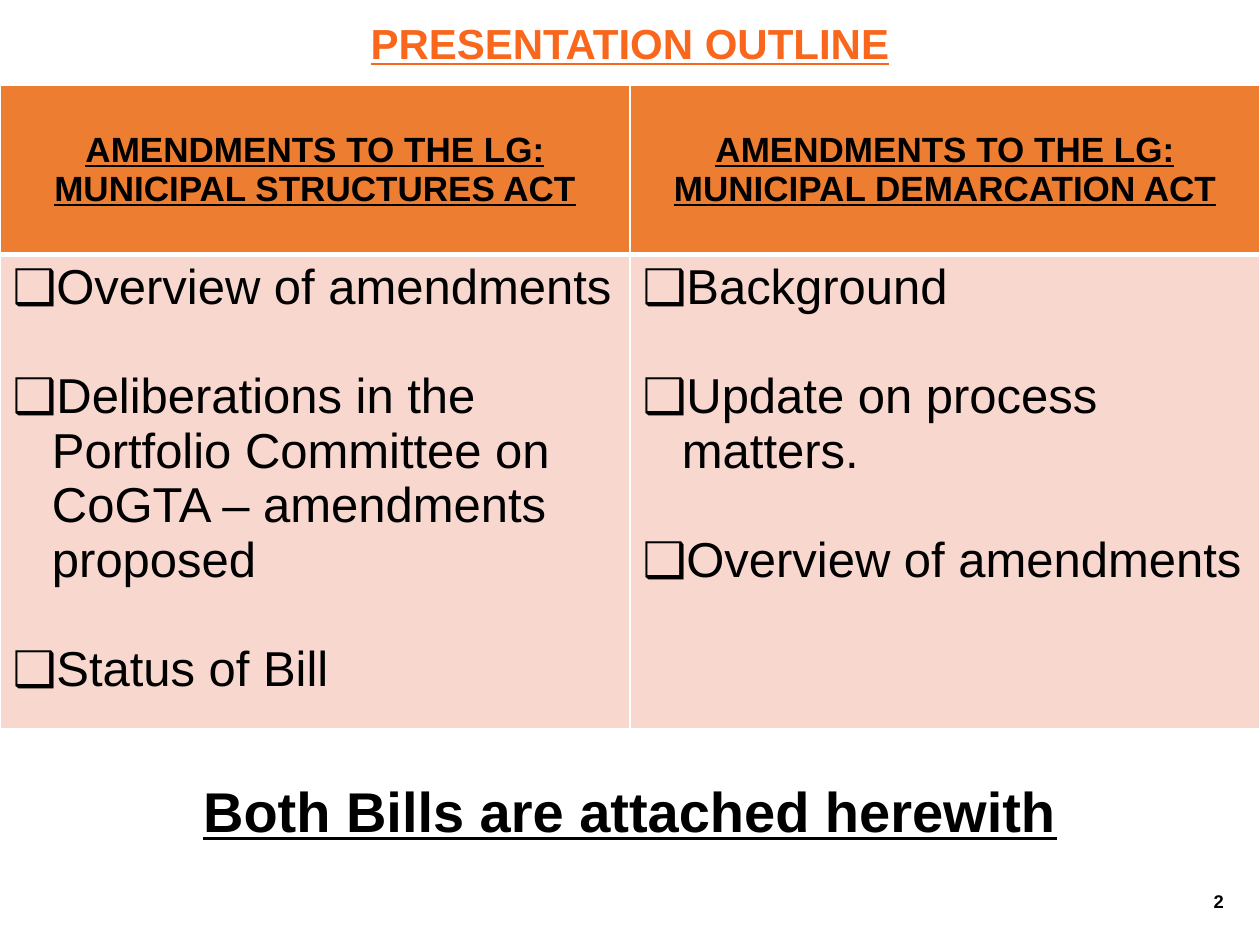
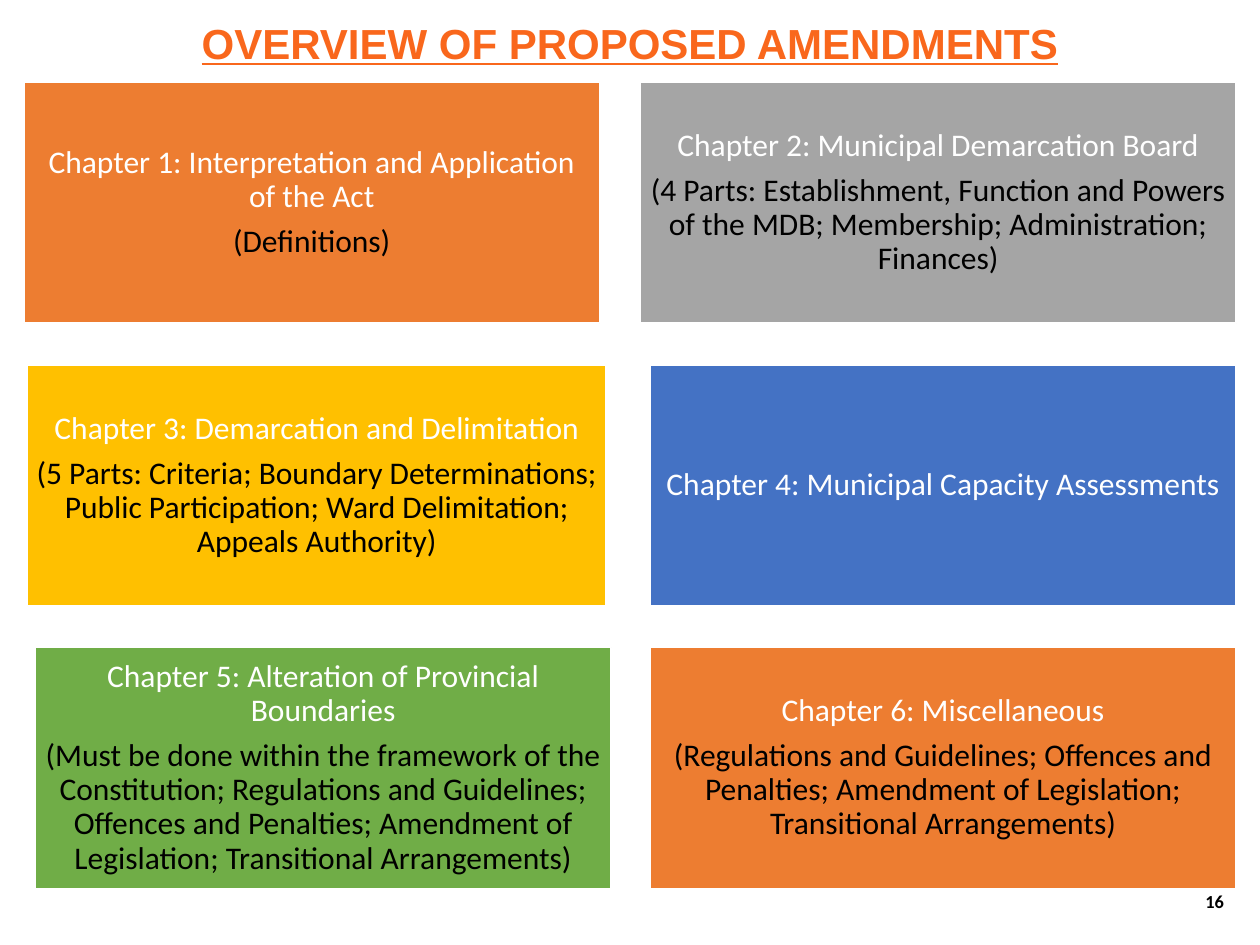
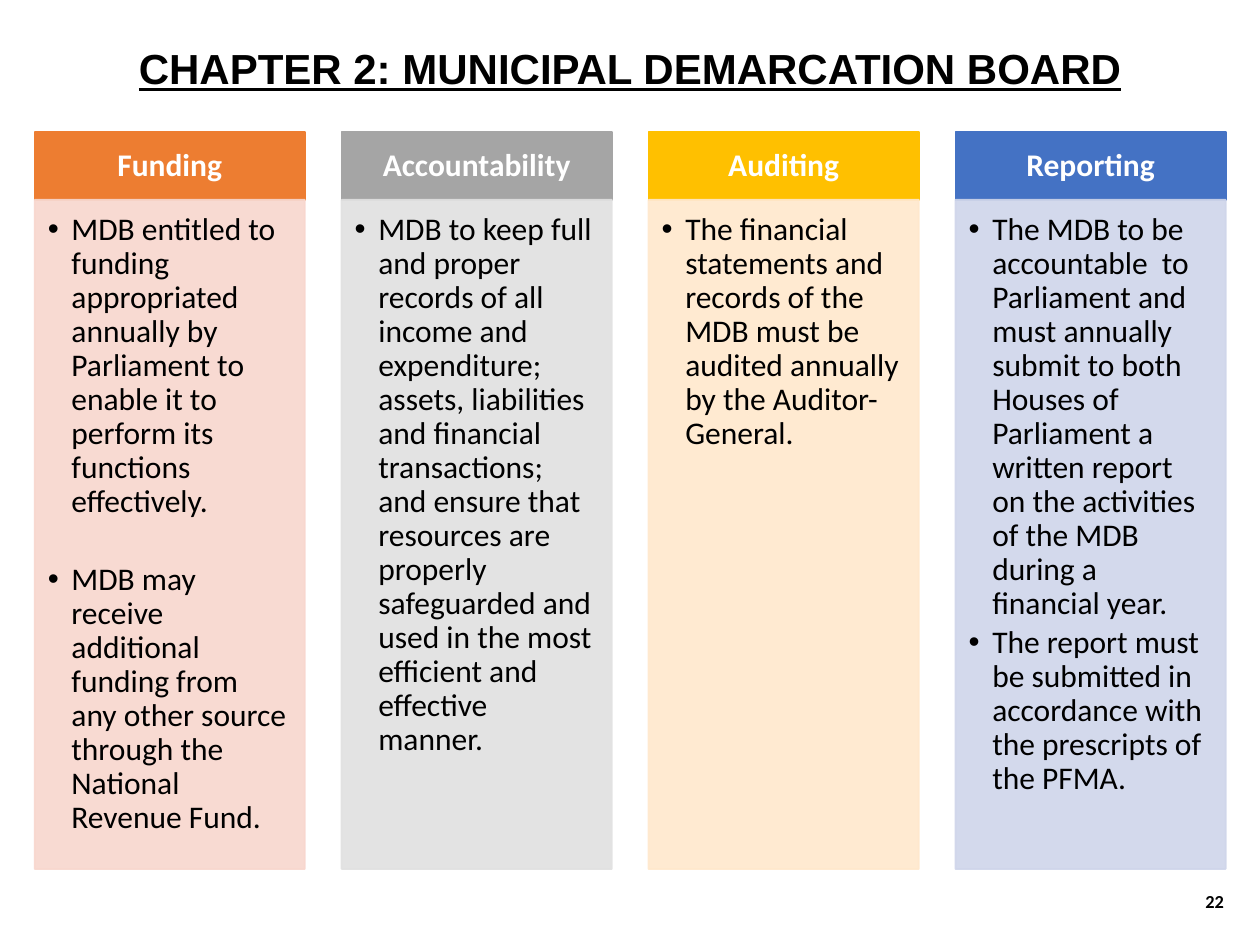
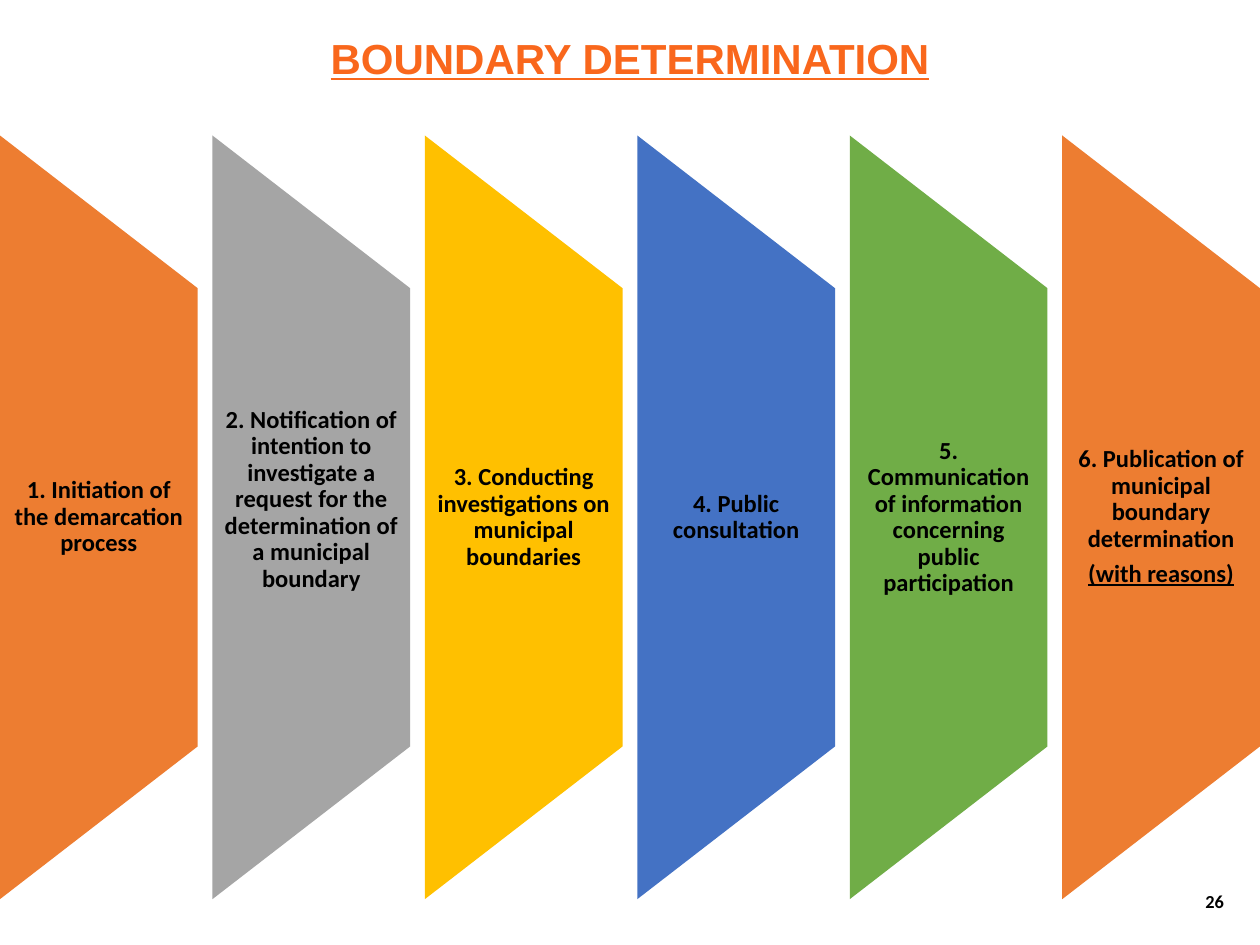
from lxml.etree import SubElement
from pptx import Presentation
from pptx.dml.color import RGBColor
from pptx.enum.shapes import MSO_SHAPE as SHAPE
from pptx.enum.text import MSO_ANCHOR as ANCHOR, PP_ALIGN as ALIGN
from pptx.oxml.ns import qn
from pptx.util import Pt

BLACK = RGBColor(0x00, 0x00, 0x00)
WHITE = RGBColor(0xFF, 0xFF, 0xFF)
TITLE_ORANGE = RGBColor(0xF9, 0x67, 0x1C)
ORANGE = RGBColor(0xED, 0x7D, 0x31)
GRAY = RGBColor(0xA5, 0xA5, 0xA5)
GOLD = RGBColor(0xFF, 0xC0, 0x00)
BLUE = RGBColor(0x44, 0x72, 0xC4)
GREEN = RGBColor(0x70, 0xAD, 0x47)
PALE_ORANGE = RGBColor(0xF8, 0xD7, 0xCE)
PALE_GRAY = RGBColor(0xE1, 0xE1, 0xE1)
PALE_GOLD = RGBColor(0xFF, 0xE8, 0xCC)
PALE_BLUE = RGBColor(0xCF, 0xD5, 0xEA)

SLIDE_W, SLIDE_H = 720, 540
HEADING, BODY = "Arial", "Calibri"
TITLE_BOX = (50, 9.4, 620, 33.8)
TALL_TITLE_BOX = (50, 9.4, 620, 62.6)

OUTLINE = [
    ("AMENDMENTS TO THE LG: MUNICIPAL STRUCTURES ACT",
     ["Overview of amendments",
      "Deliberations in the Portfolio Committee on CoGTA – amendments proposed",
      "Status of Bill"]),
    ("AMENDMENTS TO THE LG: MUNICIPAL DEMARCATION ACT",
     ["Background", "Update on process matters.", "Overview of amendments"]),
]

# left, width, colour, heading, details; two chapters to a row
CHAPTERS = [
    (13.7, 329, ORANGE, "Chapter 1: Interpretation and Application of the Act",
     "(Definitions)"),
    (365.8, 340.6, GRAY, "Chapter 2: Municipal Demarcation Board",
     "(4 Parts: Establishment, Function and Powers of the MDB; Membership; "
     "Administration; Finances)"),
    (15.8, 330.5, GOLD, "Chapter 3: Demarcation and Delimitation",
     "(5 Parts: Criteria; Boundary Determinations; Public Participation; "
     "Ward Delimitation; Appeals Authority)"),
    (371.5, 334.8, BLUE, "Chapter 4: Municipal Capacity Assessments", None),
    (20.2, 329, GREEN, "Chapter 5: Alteration of Provincial Boundaries",
     "(Must be done within the framework of the Constitution; Regulations and "
     "Guidelines; Offences and Penalties; Amendment of Legislation; "
     "Transitional Arrangements)"),
    (371.5, 334.8, ORANGE, "Chapter 6: Miscellaneous",
     "(Regulations and Guidelines; Offences and Penalties; Amendment of "
     "Legislation; Transitional Arrangements)"),
]

# heading, colour, pale colour, space after each bullet, bullets
BOARD_DUTIES = [
    ("Funding", ORANGE, PALE_ORANGE, 25.1,
     ["MDB entitled to funding appropriated annually by Parliament to enable "
      "it to perform its functions effectively.",
      "MDB may receive additional funding from any other source through the "
      "National Revenue Fund."]),
    ("Accountability", GRAY, PALE_GRAY, 2.7,
     ["MDB to keep full and proper records of all income and expenditure; "
      "assets, liabilities and financial transactions; and ensure that "
      "resources are properly safeguarded and used in the most efficient and "
      "effective manner."]),
    ("Auditing", GOLD, PALE_GOLD, 2.7,
     ["The financial statements and records of the MDB must be audited "
      "annually by the Auditor-General."]),
    ("Reporting", BLUE, PALE_BLUE, 2.7,
     ["The MDB to be accountable  to Parliament and must annually submit to "
      "both Houses of Parliament a written report on the activities of the "
      "MDB during a financial year.",
      "The report must be submitted in accordance with the prescripts of the "
      "PFMA."]),
]

# colour, step, underlined remark, bottom inset that lifts the text
STEPS = [
    (ORANGE, "1. Initiation of the demarcation process", None, 0),
    (GRAY, "2. Notification of intention to investigate a request for the "
           "determination of a municipal boundary", None, 20),
    (GOLD, "3. Conducting investigations on municipal boundaries", None, 0),
    (BLUE, "4. Public consultation", None, 0),
    (GREEN, "5. Communication of information concerning public participation",
     None, 0),
    (ORANGE, "6. Publication of municipal boundary determination",
     "(with reasons)", 0),
]


def points(*values):
    return [Pt(v) for v in values]


def add_text(tf, text, size=18, font=BODY, color=BLACK, bold=False,
             underline=False, align=ALIGN.CENTER, spacing=None, after=0,
             bullet=None, indent=0):
    """Write a paragraph, using the empty first one if it is still free."""
    p = tf.paragraphs[0]
    if p.runs:
        p = tf.add_paragraph()
    p.alignment = align
    p.space_before, p.space_after = Pt(0), Pt(after)
    if spacing:
        p.line_spacing = spacing
    if bullet:
        pPr = p._p.get_or_add_pPr()
        pPr.set("marL", str(Pt(indent)))
        pPr.set("indent", str(-Pt(indent)))
        SubElement(pPr, qn("a:buFont")).set("typeface", HEADING)
        SubElement(pPr, qn("a:buChar")).set("char", bullet)
    r = p.add_run()
    r.text = text
    r.font.name, r.font.size = font, Pt(size)
    r.font.bold, r.font.underline = bold, underline
    r.font.color.rgb = color


def set_frame(tf, anchor, insets):
    tf.word_wrap = True
    tf.vertical_anchor = anchor
    (tf.margin_left, tf.margin_top,
     tf.margin_right, tf.margin_bottom) = points(*insets)
    return tf


def add_box(slide, box, anchor=ANCHOR.MIDDLE, insets=(7.2, 3.6, 7.2, 3.6)):
    """Add a text box and return its text frame."""
    sp = slide.shapes.add_textbox(*points(*box))
    return set_frame(sp.text_frame, anchor, insets)


def add_panel(slide, box, fill, line=None, kind=SHAPE.RECTANGLE):
    sp = slide.shapes.add_shape(kind, *points(*box))
    sp.shadow.inherit = False
    sp.fill.solid()
    sp.fill.fore_color.rgb = fill
    if line is None:
        sp.line.fill.background()
    else:
        sp.line.color.rgb = line
        sp.line.width = Pt(1)
    return sp


def set_opacity(sp, percent):
    for color in sp._element.spPr.iter(qn("a:srgbClr")):
        SubElement(color, qn("a:alpha")).set("val", str(percent * 1000))


def set_borders(cell, top, bottom):
    tcPr = cell._tc.get_or_add_tcPr()
    sides = [("a:lnL", 1), ("a:lnR", 1), ("a:lnT", top), ("a:lnB", bottom)]
    for i, (side, width) in enumerate(sides):
        ln = SubElement(tcPr, qn(side), w=str(Pt(width)))
        fill = SubElement(ln, qn("a:solidFill"))
        SubElement(fill, qn("a:srgbClr")).set("val", str(WHITE))
        tcPr.insert(i, ln)


def start_slide(prs, title, number, box=TITLE_BOX, color=TITLE_ORANGE,
                number_font=BODY):
    """Add a blank slide with its title and page number."""
    slide = prs.slides.add_slide(prs.slide_layouts[6])
    add_text(add_box(slide, box), title, size=24, font=HEADING, color=color,
             bold=True, underline=True, spacing=0.9)
    add_text(add_box(slide, (668.2, 500.4, 38.2, 28.8)), str(number),
             size=10.5, font=number_font, bold=True, align=ALIGN.RIGHT)
    return slide


def outline_table(slide, box):
    header_h = 96.5
    table = slide.shapes.add_table(2, len(OUTLINE), *points(*box)).table
    table.rows[0].height = Pt(header_h)
    table.rows[1].height = Pt(box[3] - header_h)
    for col, (heading, items) in enumerate(OUTLINE):
        table.columns[col].width = Pt(box[2] / len(OUTLINE))
        head, body = table.cell(0, col), table.cell(1, col)
        for cell, fill, top, bottom in ((head, ORANGE, 1, 3),
                                        (body, PALE_ORANGE, 3, 1)):
            cell.fill.solid()
            cell.fill.fore_color.rgb = fill
            set_borders(cell, top, bottom)
        head.vertical_anchor = ANCHOR.MIDDLE
        add_text(head.text_frame, heading, size=20, font=HEADING, bold=True,
                 underline=True)
        for i, item in enumerate(items):
            add_text(body.text_frame, item, size=28, font=HEADING,
                     align=ALIGN.LEFT, bullet="❑", indent=22.5,
                     after=31 if i < len(items) - 1 else 0)


def chapter_grid(slide, top, height, pitch):
    for i, (left, width, color, heading, details) in enumerate(CHAPTERS):
        box = (left, top + i // 2 * pitch, width, height)
        sp = add_panel(slide, box, color, WHITE)
        tf = set_frame(sp.text_frame, ANCHOR.MIDDLE, [4.8] * 4)
        add_text(tf, heading, color=WHITE, spacing=0.9,
                 after=6.3 if details else 0)
        if details:
            add_text(tf, details, spacing=0.9)


def duty_columns(slide, box):
    left, top, width, height = box
    column_w, header_h = 154.4, 38.6
    pitch = (width - column_w) / (len(BOARD_DUTIES) - 1)
    for i, (heading, color, pale, after, bullets) in enumerate(BOARD_DUTIES):
        x = left + i * pitch
        head = add_panel(slide, (x, top, column_w, header_h), color, color)
        tf = set_frame(head.text_frame, ANCHOR.MIDDLE, (10, 5.8, 10, 5.8))
        add_text(tf, heading, color=WHITE, bold=True, spacing=0.9)
        body = add_panel(slide, (x, top + header_h, column_w,
                                 height - header_h), pale, pale)
        set_opacity(body, 90)
        tf = set_frame(body.text_frame, ANCHOR.TOP, (7.5, 7.5, 10, 11.3))
        for bullet in bullets:
            add_text(tf, bullet, align=ALIGN.LEFT, spacing=0.9, after=after,
                     bullet="•", indent=13.5)


def step_row(slide, box):
    """Draw the steps as trapezoids turned to point right."""
    left, top, width, height = box
    step_w = 113
    pitch = (width - step_w) / (len(STEPS) - 1)
    for i, (color, step, remark, lift) in enumerate(STEPS):
        x = left + i * pitch
        unturned = (x + (step_w - height) / 2, top + (height - step_w) / 2,
                    height, step_w)
        sp = add_panel(slide, unturned, color,
                       kind=SHAPE.FLOWCHART_MANUAL_OPERATION)
        sp.rotation = 270
        tf = add_box(slide, (x, top + height / 5, step_w, height * 3 / 5),
                     insets=(7, 0, 7, lift))
        add_text(tf, step, size=14, bold=True, spacing=0.9,
                 after=4.9 if remark else 0)
        if remark:
            add_text(tf, remark, size=14, bold=True, underline=True,
                     spacing=0.9)


def main():
    prs = Presentation()
    prs.slide_width, prs.slide_height = points(SLIDE_W, SLIDE_H)

    slide = start_slide(prs, "PRESENTATION OUTLINE", 2,
                        box=(0, 9.4, SLIDE_W, 33.8), number_font=HEADING)
    outline_table(slide, (0, 48.8, SLIDE_W, 353))
    add_text(add_box(slide, (0, 440, SLIDE_W, 46), ANCHOR.TOP),
             "Both Bills are attached herewith", size=32, font=HEADING,
             bold=True, underline=True)

    slide = start_slide(prs, "OVERVIEW OF PROPOSED AMENDMENTS", 16)
    chapter_grid(slide, top=46.8, height=138, pitch=161.6)

    slide = start_slide(prs, "CHAPTER 2: MUNICIPAL DEMARCATION BOARD", 22,
                        box=TALL_TITLE_BOX, color=BLACK)
    duty_columns(slide, (19.8, 75.6, 680.6, 421))

    slide = start_slide(prs, "BOUNDARY DETERMINATION", 26,
                        box=(50, 3.6, 620, 62.6))
    step_row(slide, (0, 77.4, SLIDE_W, 436.4))

    prs.save("out.pptx")


if __name__ == "__main__":
    main()
